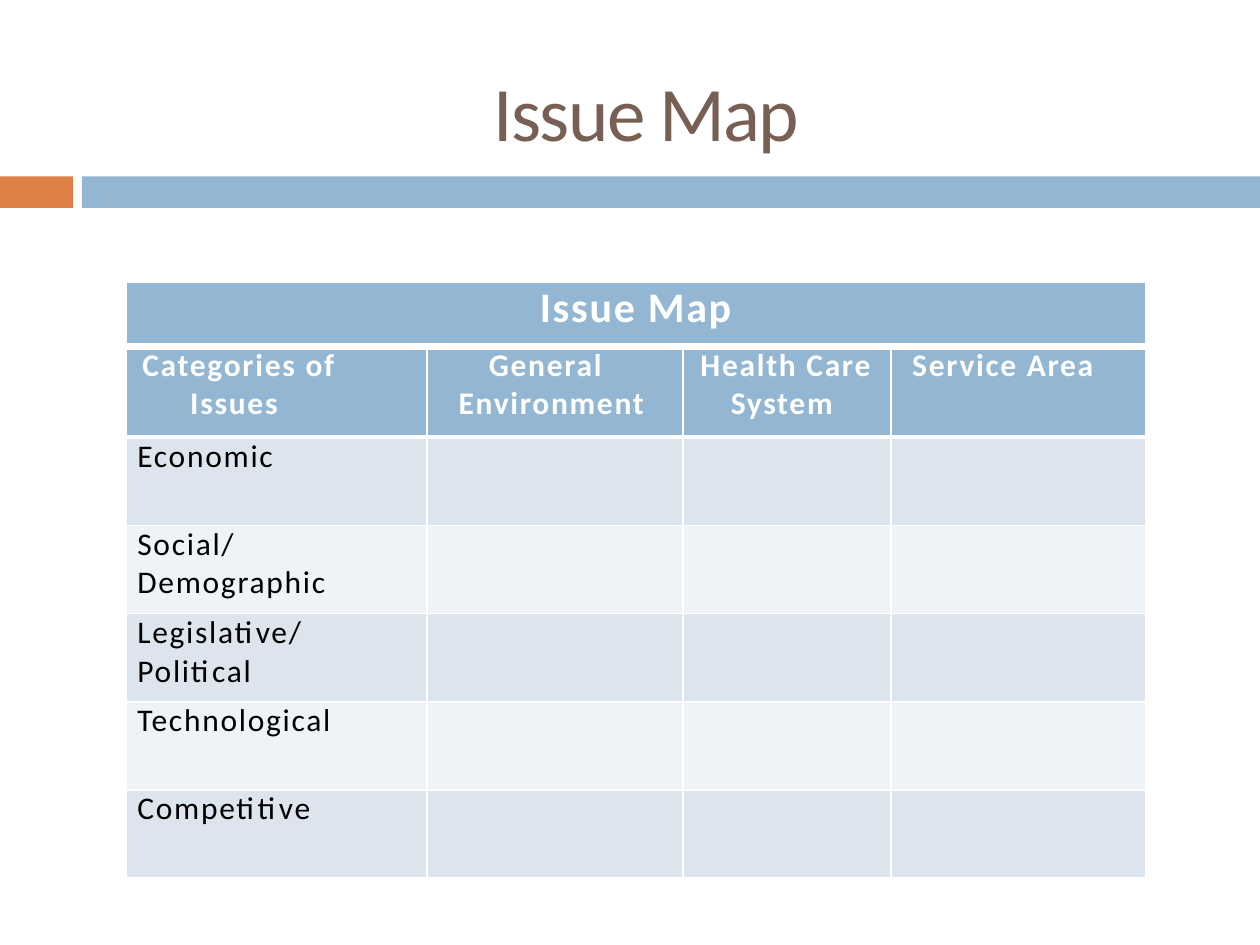
from dataclasses import dataclass

from lxml.etree import SubElement
from pptx import Presentation
from pptx.dml.color import RGBColor as Rgb
from pptx.enum.shapes import MSO_SHAPE as Shape
from pptx.enum.text import MSO_ANCHOR as Anchor, PP_ALIGN as Align
from pptx.oxml.ns import qn
from pptx.util import Pt

EMU_PER_PX = 9144


@dataclass(frozen=True)
class Theme:
    font: str = "Calibri"
    brown: str = "775F54"
    orange: str = "DD8046"
    blue: str = "93B6D2"
    band_dark: str = "DCE4ED"
    band_light: str = "EEF3F7"
    white: str = "FFFFFF"
    black: str = "000000"
    title_size: int = 44
    heading_size: int = 24
    body_size: int = 18
    thin: float = 1
    medium: float = 3
    thick: float = 4.4


THEME = Theme()
COLUMN_WIDTHS = [239, 203, 165, 202]
ROW_HEIGHTS = [51, 72, 70, 70, 70, 70, 70]
HEADERS = [
    ("Categories of Issues", 51, -38),
    ("General Environment", 25, 24),
    ("Health Care System", 38, -24),
    ("Service Area", 17, 0),
]
CATEGORIES = [
    "Economic",
    "Social/\nDemographic",
    "Legislative/\nPolitical",
    "Technological",
    "Competitive",
]


def px(length):
    return length * EMU_PER_PX


def format_text(text_frame, size, color, bold=False, spacing=1, margin=0, indent=0,
                align=Align.LEFT):
    for paragraph in text_frame.paragraphs:
        paragraph.alignment = align
        properties = paragraph._p.get_or_add_pPr()
        properties.set("marL", str(px(margin)))
        properties.set("indent", str(px(indent)))
        for run in paragraph.runs:
            run.font.name = THEME.font
            run.font.size = Pt(size)
            run.font.bold = bold
            run.font.color.rgb = Rgb.from_string(color)
            run._r.get_or_add_rPr().set("spc", str(spacing * 100))


def place_title(slide, left, top, width, height):
    title = slide.shapes.title
    title.left, title.top = px(left), px(top)
    title.width, title.height = px(width), px(height)
    text_frame = title.text_frame
    text_frame.text = "Issue Map"
    text_frame.vertical_anchor = Anchor.TOP
    text_frame.margin_left = text_frame.margin_right = text_frame.margin_bottom = 0
    text_frame.margin_top = px(31)
    format_text(text_frame, THEME.title_size, THEME.brown, spacing=-1, margin=340)


def add_divider(slide, left, top, width, height):
    accent_width, gap = 58, 7
    bar_left = accent_width + gap
    for offset, bar_width, color in (
        (0, accent_width, THEME.orange),
        (bar_left, width - bar_left, THEME.blue),
    ):
        bar = slide.shapes.add_shape(
            Shape.RECTANGLE, px(left + offset), px(top), px(bar_width), px(height))
        bar.shadow.inherit = False
        bar.fill.solid()
        bar.fill.fore_color.rgb = Rgb.from_string(color)
        bar.line.fill.background()


def format_cell(cell, fill, top_line, bottom_line):
    cell.margin_left = cell.margin_right = cell.margin_top = cell.margin_bottom = 0
    properties = cell._tc.get_or_add_tcPr()
    for side, weight in (("L", THEME.thin), ("R", THEME.thin),
                         ("T", top_line), ("B", bottom_line)):
        line = SubElement(properties, qn(f"a:ln{side}"), w=str(Pt(weight)))
        line_fill = SubElement(line, qn("a:solidFill"))
        SubElement(line_fill, qn("a:srgbClr"), val=THEME.white)
    cell.fill.solid()
    cell.fill.fore_color.rgb = Rgb.from_string(fill)


def add_issue_table(slide, left, top, width, height):
    table = slide.shapes.add_table(
        len(ROW_HEIGHTS), len(COLUMN_WIDTHS),
        px(left), px(top), px(width), px(height)).table
    for column, column_width in zip(table.columns, COLUMN_WIDTHS):
        column.width = px(column_width)
    for row, row_height in zip(table.rows, ROW_HEIGHTS):
        row.height = px(row_height)

    last_row = len(ROW_HEIGHTS) - 1
    lines = [THEME.thin, THEME.thick, THEME.medium] + [THEME.thin] * (last_row - 1)
    bands = [THEME.band_dark, THEME.band_light]
    for index, row in enumerate(table.rows):
        fill = THEME.blue if index < 2 else bands[index % 2]
        for cell in row.cells:
            format_cell(cell, fill, lines[index], lines[index + 1])

    heading = table.cell(0, 0)
    heading.merge(table.cell(0, len(COLUMN_WIDTHS) - 1))
    heading.text_frame.text = "Issue Map"
    format_text(heading.text_frame, THEME.heading_size, THEME.white, bold=True,
                align=Align.CENTER)
    for index, (text, margin, indent) in enumerate(HEADERS):
        text_frame = table.cell(1, index).text_frame
        text_frame.text = text
        format_text(text_frame, THEME.body_size, THEME.white, bold=True,
                    margin=margin, indent=indent)
    for index, text in enumerate(CATEGORIES, start=2):
        text_frame = table.cell(index, 0).text_frame
        text_frame.text = text
        format_text(text_frame, THEME.body_size, THEME.black, margin=9)


def main():
    presentation = Presentation()
    presentation.slide_width, presentation.slide_height = px(1000), px(750)
    slide = presentation.slides.add_slide(presentation.slide_layouts[5])
    add_divider(slide, 0, 140, 1000, 25)
    place_title(slide, 52, 20, 896, 125)
    add_issue_table(slide, 100, 224, sum(COLUMN_WIDTHS), sum(ROW_HEIGHTS))
    presentation.save("out.pptx")


if __name__ == "__main__":
    main()
